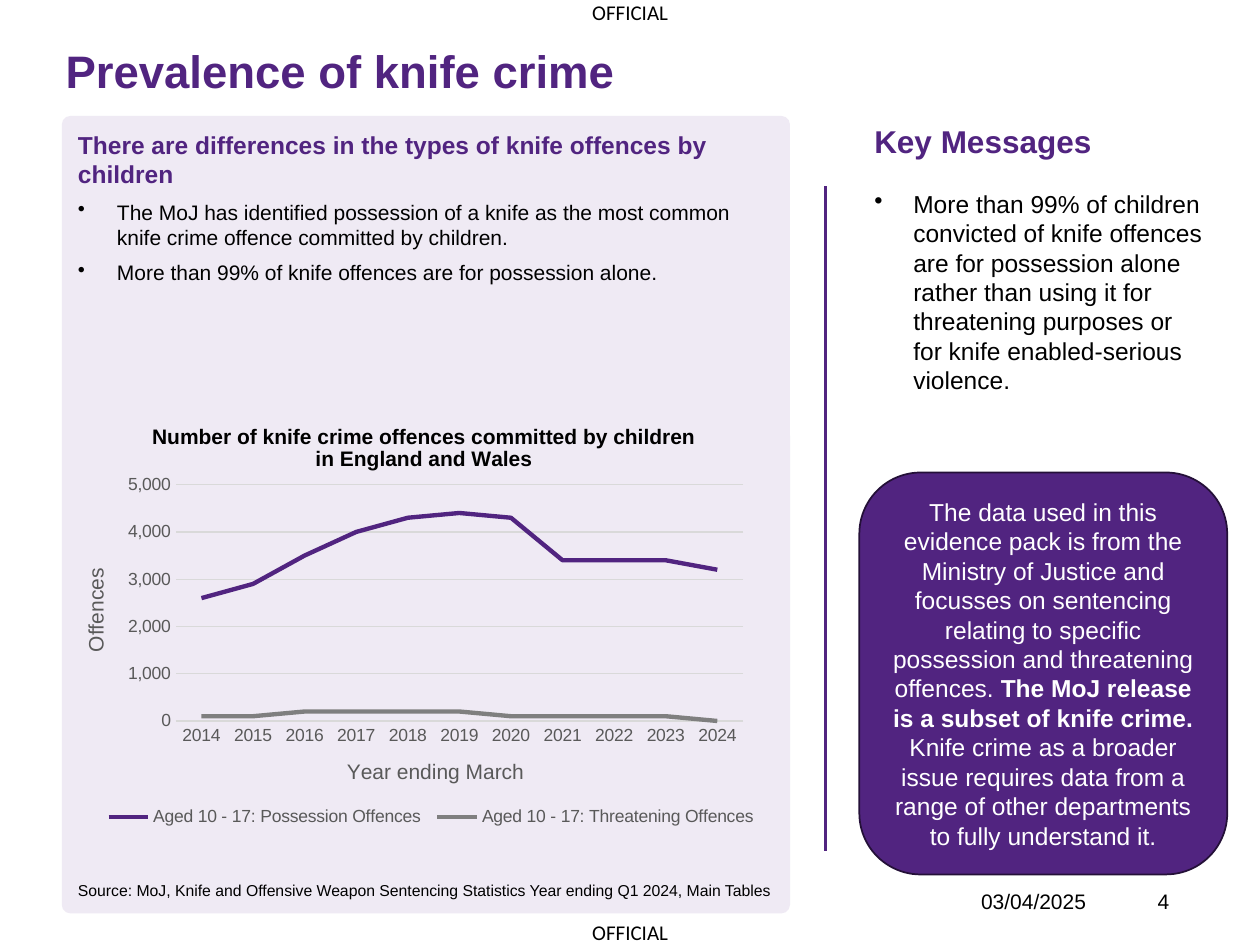
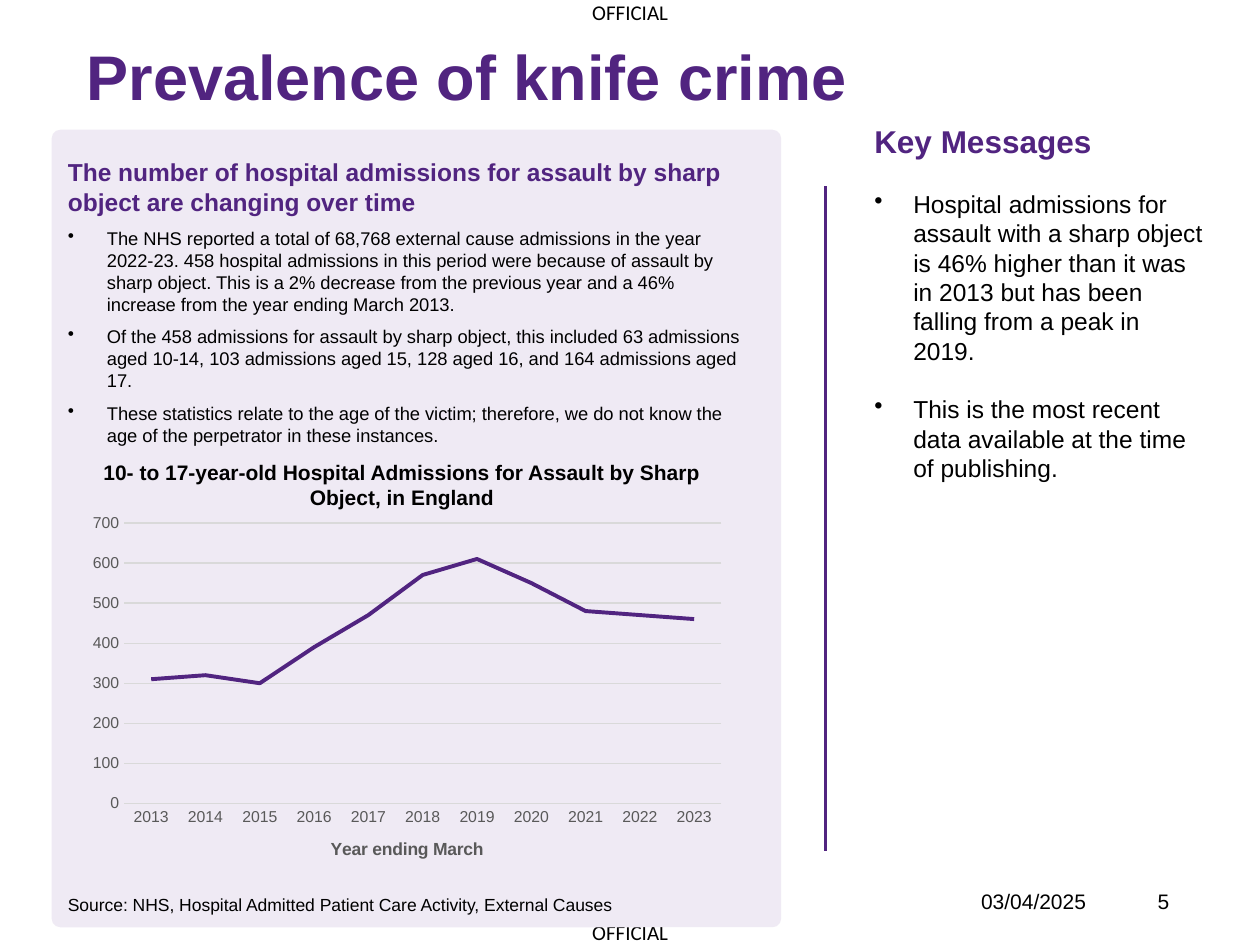
from pptx import Presentation
from pptx.chart.data import CategoryChartData as ChartData
from pptx.dml.color import RGBColor
from pptx.enum.chart import XL_CHART_TYPE as Kind, XL_LEGEND_POSITION as Side
from pptx.enum.chart import XL_MARKER_STYLE as Mark, XL_TICK_MARK as Tick
from pptx.enum.shapes import MSO_CONNECTOR as Link, MSO_SHAPE as Form
from pptx.enum.text import MSO_ANCHOR as Anchor, MSO_AUTO_SIZE as Fit, PP_ALIGN as Align
from pptx.oxml.ns import qn
from pptx.util import Inches, Pt
from lxml import etree

# Shared look
FONT = "Arial"
PURPLE, PALE, EDGE = "512480", "EFEAF4", "241038"
BLACK, WHITE, GREY, RULE, ASH = "000000", "FFFFFF", "595959", "D9D9D9", "7F7F7F"
INDENT = 0.31


def color(code):
    return RGBColor.from_string(code)


def place(box):
    return [Inches(n) for n in box]


def style(font, size, code, bold=False, name=FONT):
    font.name, font.size, font.bold = name, Pt(size), bold
    font.color.rgb = color(code)


def write(para, text, size, code=BLACK, bold=False, name=FONT):
    run = para.add_run()
    run.text = text
    style(run.font, size, code, bold, name)


def trim(frame):
    frame.margin_left = frame.margin_right = 0
    frame.margin_top = frame.margin_bottom = 0


def add_text(slide, box, wrap=True):
    frame = slide.shapes.add_textbox(*place(box)).text_frame
    frame.word_wrap = wrap
    return frame


def add_form(slide, box, fill):
    shape = slide.shapes.add_shape(Form.ROUNDED_RECTANGLE, *place(box))
    shape.shadow.inherit = False
    shape.fill.solid()
    shape.fill.fore_color.rgb = color(fill)
    shape.line.fill.background()
    return shape


def bullet(frame, text, size):
    para = frame.add_paragraph()
    props = para._p.get_or_add_pPr()
    props.set("marL", str(Inches(INDENT)))
    props.set("indent", str(-Inches(INDENT)))
    etree.SubElement(props, qn("a:buChar")).set("char", "•")
    write(para, text, size)
    return para


# Title, markings and footer
def add_page(deck, title, box, size, number):
    slide = deck.slides.add_slide(deck.slide_layouts[5])
    head = slide.shapes.title
    head.left, head.top, head.width, head.height = place(box)
    frame = head.text_frame
    trim(frame)
    frame.word_wrap, frame.auto_size = True, Fit.NONE
    frame.vertical_anchor = Anchor.TOP
    para = frame.paragraphs[0]
    para.alignment = Align.LEFT
    write(para, title, size, PURPLE, True)

    for top in (0, 7.3):
        frame = add_text(slide, (4.7, top, 0.64, 0.2), False)
        trim(frame)
        write(frame.paragraphs[0], "OFFICIAL", 12, name="Calibri")

    for left, wide, text in ((7.44, 1.18, "03/04/2025"), (8.98, 0.3, number)):
        frame = add_text(slide, (left, 7.05, wide, 0.2))
        trim(frame)
        frame.vertical_anchor = Anchor.MIDDLE
        frame.paragraphs[0].alignment = Align.RIGHT
        write(frame.paragraphs[0], text, 12)
    return slide


# Pale panel with heading, points and source
def add_panel(slide, box, inset, head, points, size, source, drop, small):
    left, top, wide, high = box
    add_form(slide, box, PALE).adjustments[0] = 0.012
    frame = add_text(slide, (left + 0.03, top + inset, wide - 0.2, 1.35))
    write(frame.paragraphs[0], head, 14, PURPLE, True)
    for text in points:
        bullet(frame, text, size)
    for para in frame.paragraphs:
        para.space_after = Pt(6)
    note = add_text(slide, (left + 0.03, top + drop, wide - 0.03, 0.26))
    write(note.paragraphs[0], source, small)


# Divider and key messages
def add_key(slide, box, points):
    left, top, wide, high = box
    x = Inches(left - 0.29)
    line = slide.shapes.add_connector(Link.STRAIGHT, x, Inches(top + 0.56),
                                      x, Inches(top + 5.83))
    line.line.color.rgb = color(PURPLE)
    line.line.width = Pt(1.5)
    etree.SubElement(line._element.spPr, qn("a:effectLst"))
    frame = add_text(slide, box)
    write(frame.paragraphs[0], "Key Messages", 18, PURPLE, True)
    for text in points:
        bullet(frame, text, 14).space_before = Pt(16.5)


def add_call(slide, box, parts):
    shape = add_form(slide, box, PURPLE)
    shape.line.color.rgb = color(EDGE)
    shape.line.width = Pt(1)
    frame = shape.text_frame
    frame.word_wrap, frame.vertical_anchor = True, Anchor.MIDDLE
    para = frame.paragraphs[0]
    para.alignment = Align.CENTER
    for text, bold in parts:
        write(para, text, 14, WHITE, bold)


# Line chart
def set_area(node, area, after=None, inner=False):
    """Give a chart part a fixed place, as shares of the chart."""
    for old in node.findall(qn("c:layout")):
        node.remove(old)
    layout = etree.Element(qn("c:layout"))
    manual = etree.SubElement(layout, qn("c:manualLayout"))
    pairs = [("layoutTarget", "inner")] if inner else []
    pairs += [("xMode", "edge"), ("yMode", "edge"), *zip("xywh", area)]
    for tag, value in pairs:
        etree.SubElement(manual, qn("c:" + tag)).set("val", str(value))
    if after:
        node.find(qn(after)).addnext(layout)
    else:
        node.insert(0, layout)


def name_axis(axis, text, size, bold=False):
    para = axis.axis_title.text_frame.paragraphs[0]
    write(para, text, size, GREY, bold)


def add_lines(slide, box, years, rows, area, top, step, size, width):
    data = ChartData()
    data.categories = [str(year) for year in years]
    for name, values, _ in rows:
        data.add_series(name, values)
    chart = slide.shapes.add_chart(Kind.LINE, *place(box), data).chart
    style(chart.font, 10, BLACK)
    chart.has_title = chart.has_legend = False
    chart.plots[0].vary_by_categories = False
    for line, (_, _, code) in zip(chart.plots[0].series, rows):
        line.smooth = False
        line.marker.style = Mark.NONE
        line.format.line.color.rgb = color(code)
        line.format.line.width = Pt(width)

    cat, val = chart.category_axis, chart.value_axis
    for axis in (cat, val):
        axis.major_tick_mark = axis.minor_tick_mark = Tick.NONE
        style(axis.tick_labels.font, size, GREY)
    val.minimum_scale, val.maximum_scale, val.major_unit = 0, top, step
    val.tick_labels.number_format = "#,##0"
    val.tick_labels.number_format_is_linked = False
    val.has_major_gridlines = True
    for line in (cat.format.line, val.major_gridlines.format.line):
        line.color.rgb = color(RULE)
        line.width = Pt(0.75)
    val.format.line.fill.background()
    set_area(chart.element.find(".//" + qn("c:plotArea")), area, inner=True)
    return chart


def add_legend(chart, area):
    chart.has_legend = True
    legend = chart.legend
    legend.position = Side.BOTTOM
    legend.include_in_layout = False
    style(legend.font, 10, GREY)
    set_area(chart.element.find(".//" + qn("c:legend")), area, "c:legendPos")


# Slides
def add_types(deck):
    slide = add_page(deck, "Prevalence of knife crime", (0.52, 0.34, 8.61, 1.18), 26, "4")
    add_panel(slide, (0.49, 0.92, 5.78, 6.33), 0.06,
              "There are differences in the types of knife offences by children",
              ["The MoJ has identified possession of a knife as the most common knife "
               "crime offence committed by children.",
               "More than 99% of knife offences are for possession alone."], 12,
              "Source: MoJ, Knife and Offensive Weapon Sentencing Statistics "
              "Year ending Q1 2024, Main Tables", 6.02, 9)
    rows = [("Aged 10 - 17: Possession Offences",
             [2600, 2900, 3500, 4000, 4300, 4400, 4300, 3400, 3400, 3400, 3200], PURPLE),
            ("Aged 10 - 17: Threatening Offences",
             [100, 100, 200, 200, 200, 200, 100, 100, 100, 100, 0], ASH)]
    chart = add_lines(slide, (0.55, 3.21, 5.63, 3.54), range(2014, 2025), rows,
                      (0.15, 0.18, 0.8, 0.53), 5000, 1000, 10, 2.5)
    chart.has_title = True
    write(chart.chart_title.text_frame.paragraphs[0],
          "Number of knife crime offences committed by children in England and Wales",
          12, bold=True)
    name_axis(chart.category_axis, "Year ending March", 12)
    name_axis(chart.value_axis, "Offences", 12)
    add_legend(chart, (0.04, 0.88, 0.94, 0.09))
    add_key(slide, (6.84, 0.92, 2.82, 3.06),
            ["More than 99% of children convicted of knife offences are for possession "
             "alone rather than using it for threatening purposes or for knife "
             "enabled-serious violence."])
    add_call(slide, (6.82, 3.75, 2.92, 3.19),
             [("The data used in this evidence pack is from the Ministry of Justice and "
               "focusses on sentencing relating to specific possession and threatening "
               "offences. ", False),
              ("The MoJ release is a subset of knife crime. ", True),
              ("Knife crime as a broader issue requires data from a range of other "
               "departments to fully understand it.", False)])


def add_wards(deck):
    slide = add_page(deck, "Prevalence of knife crime", (0.69, 0.3, 8.61, 1.18), 36, "5")
    add_panel(slide, (0.41, 1.03, 5.79, 6.33), 0.17,
              "The number of hospital admissions for assault by sharp object are "
              "changing over time",
              ["The NHS reported a total of 68,768 external cause admissions in the year "
               "2022-23. 458 hospital admissions in this period were because of assault "
               "by sharp object. This is a 2% decrease from the previous year and a 46% "
               "increase from the year ending March 2013.",
               "Of the 458 admissions for assault by sharp object, this included 63 "
               "admissions aged 10-14, 103 admissions aged 15, 128 aged 16, and 164 "
               "admissions aged 17.",
               "These statistics relate to the age of the victim; therefore, we do not "
               "know the age of the perpetrator in these instances."], 10.5,
              "Source: NHS, Hospital Admitted Patient Care Activity, External Causes",
              6.02, 10)
    frame = add_text(slide, (0.43, 3.6, 5.52, 0.5))
    frame.paragraphs[0].alignment = Align.CENTER
    write(frame.paragraphs[0], "10- to 17-year-old Hospital Admissions for Assault by "
          "Sharp Object, in England", 12, bold=True)
    rows = [("Series 1", [310, 320, 300, 390, 470, 570, 610, 550, 480, 470, 460], PURPLE)]
    chart = add_lines(slide, (0.62, 4.03, 5.21, 3.01), range(2013, 2024), rows,
                      (0.07, 0.04, 0.91, 0.74), 700, 100, 9, 2.25)
    name_axis(chart.category_axis, "Year ending March", 10, True)
    add_key(slide, (6.84, 0.92, 2.82, 3.53),
            ["Hospital admissions for assault with a sharp object is 46% higher than it "
             "was in 2013 but has been falling from a peak in 2019.",
             "This is the most recent data available at the time of publishing."])


def main():
    deck = Presentation()
    deck.slide_width, deck.slide_height = Inches(10), Inches(7.5)
    add_types(deck)
    add_wards(deck)
    deck.save("out.pptx")


if __name__ == "__main__":
    main()
